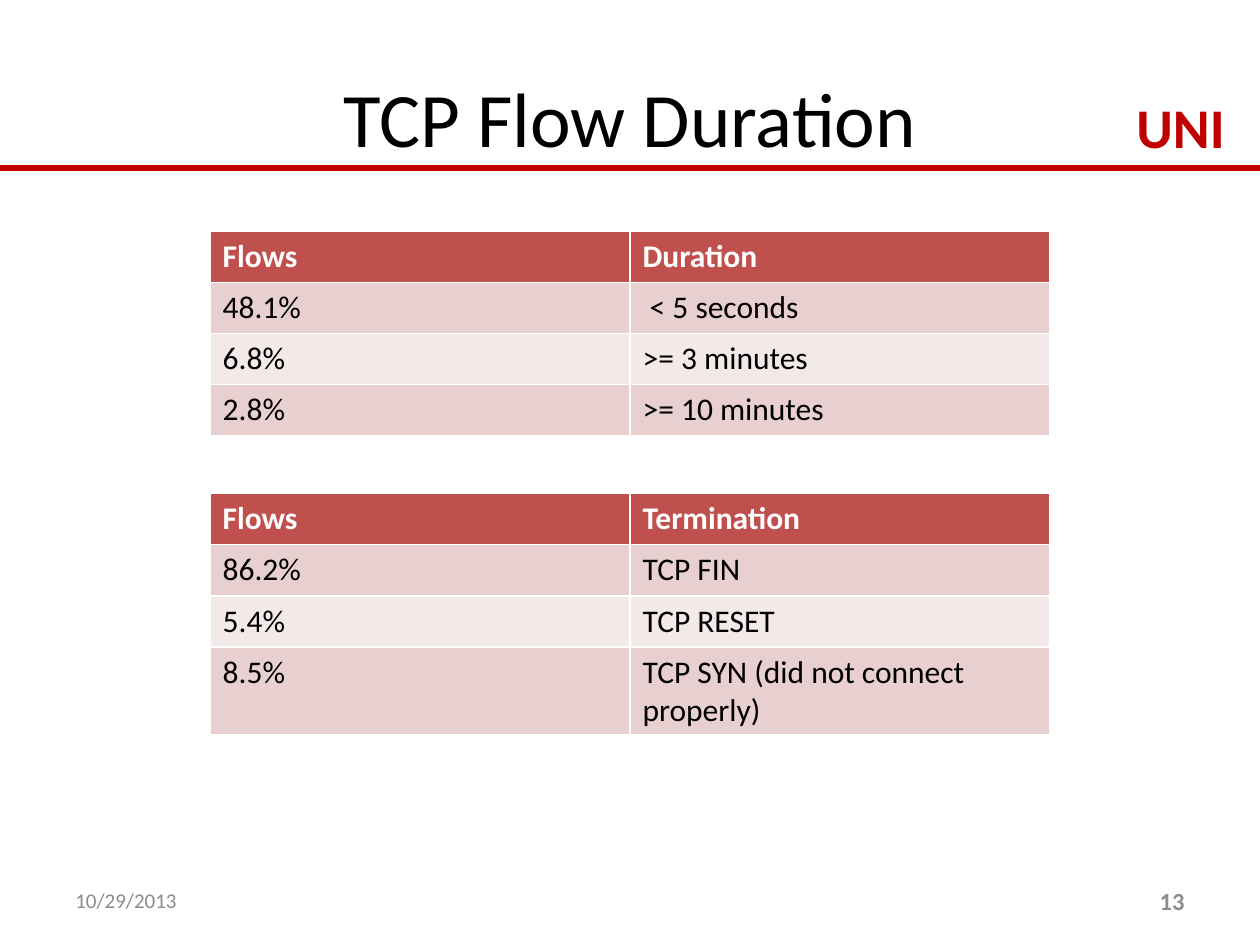
from dataclasses import dataclass

from lxml import etree
from pptx import Presentation
from pptx.dml.color import RGBColor
from pptx.enum.shapes import MSO_CONNECTOR
from pptx.enum.text import MSO_ANCHOR, PP_ALIGN
from pptx.oxml.ns import qn
from pptx.util import Cm, Pt

LEFT, CENTER, RIGHT = PP_ALIGN.LEFT, PP_ALIGN.CENTER, PP_ALIGN.RIGHT
TOP, MIDDLE = MSO_ANCHOR.TOP, MSO_ANCHOR.MIDDLE
STRAIGHT = MSO_CONNECTOR.STRAIGHT


@dataclass(frozen=True)
class Theme:
    font: str = "Calibri"
    accent: str = "C00000"
    black: str = "000000"
    white: str = "FFFFFF"
    gray: str = "8C8C8C"
    header_fill: str = "C0504D"
    band_fills: tuple = ("E8D0D0", "F4E9E9")
    title_size: int = 44
    brand_size: int = 32
    table_size: int = 18
    number_size: int = 14
    date_size: int = 12
    rule_width: float = 3.25


THEME = Theme()
SLIDE_WIDTH, SLIDE_HEIGHT = 25.4, 19.05
MARGIN = 1.27
TABLE_WIDTH, ROW_HEIGHT = 16.93, 1.03
FOOTER_TOP, FOOTER_WIDTH, FOOTER_HEIGHT = 17.65, 5.93, 1.01


def write_text(text_frame, text, size, color=THEME.black, bold=False, align=LEFT):
    paragraph = text_frame.paragraphs[0]
    paragraph.alignment = align
    run = paragraph.add_run()
    run.text = text
    run.font.name = THEME.font
    run.font.size = Pt(size)
    run.font.bold = bold
    run.font.color.rgb = RGBColor.from_string(color)


def add_text(slide, text, left, top, width, height, anchor=MIDDLE, wrap=True, **text_format):
    text_box = slide.shapes.add_textbox(Cm(left), Cm(top), Cm(width), Cm(height))
    text_box.text_frame.word_wrap = wrap
    text_box.text_frame.vertical_anchor = anchor
    write_text(text_box.text_frame, text, **text_format)


def add_rule(slide, top):
    rule = slide.shapes.add_connector(STRAIGHT, 0, Cm(top), Cm(SLIDE_WIDTH), Cm(top))
    rule.line.color.rgb = RGBColor.from_string(THEME.accent)
    rule.line.width = Pt(THEME.rule_width)
    etree.SubElement(rule._element.spPr, qn("a:effectLst"))


def add_flow_table(slide, top, rows):
    left = (SLIDE_WIDTH - TABLE_WIDTH) / 2
    table = slide.shapes.add_table(
        len(rows), len(rows[0]), Cm(left), Cm(top), Cm(TABLE_WIDTH), Cm(ROW_HEIGHT * len(rows))
    ).table
    for row_index, row in enumerate(rows):
        is_header = row_index == 0
        fill = THEME.header_fill if is_header else THEME.band_fills[(row_index - 1) % 2]
        color = THEME.white if is_header else THEME.black
        for column_index, text in enumerate(row):
            cell = table.cell(row_index, column_index)
            cell.fill.solid()
            cell.fill.fore_color.rgb = RGBColor.from_string(fill)
            write_text(cell.text_frame, text, THEME.table_size, color, bold=is_header)


def main():
    presentation = Presentation()
    presentation.slide_width = Cm(SLIDE_WIDTH)
    presentation.slide_height = Cm(SLIDE_HEIGHT)
    slide = presentation.slides.add_slide(presentation.slide_layouts[6])

    add_text(slide, "UNI", 22.66, 1.75, 2.46, 1.62, anchor=TOP, wrap=False,
             size=THEME.brand_size, color=THEME.accent, bold=True)
    add_rule(slide, 3.38)
    add_text(slide, "TCP Flow Duration", MARGIN, 0.76, SLIDE_WIDTH - 2 * MARGIN, 3.18,
             size=THEME.title_size, align=CENTER)
    add_text(slide, "10/29/2013", MARGIN, FOOTER_TOP, FOOTER_WIDTH, FOOTER_HEIGHT,
             size=THEME.date_size, color=THEME.gray)
    add_text(slide, "13", SLIDE_WIDTH - MARGIN - FOOTER_WIDTH, FOOTER_TOP,
             FOOTER_WIDTH, FOOTER_HEIGHT,
             size=THEME.number_size, color=THEME.gray, bold=True, align=RIGHT)

    add_flow_table(slide, 4.66, [
        ("Flows", "Duration"),
        ("48.1%", " < 5 seconds"),
        ("6.8%", ">= 3 minutes"),
        ("2.8%", ">= 10 minutes"),
    ])
    add_flow_table(slide, 9.95, [
        ("Flows", "Termination"),
        ("86.2%", "TCP FIN"),
        ("5.4%", "TCP RESET"),
        ("8.5%", "TCP SYN (did not connect properly)"),
    ])
    presentation.save("out.pptx")


if __name__ == "__main__":
    main()
